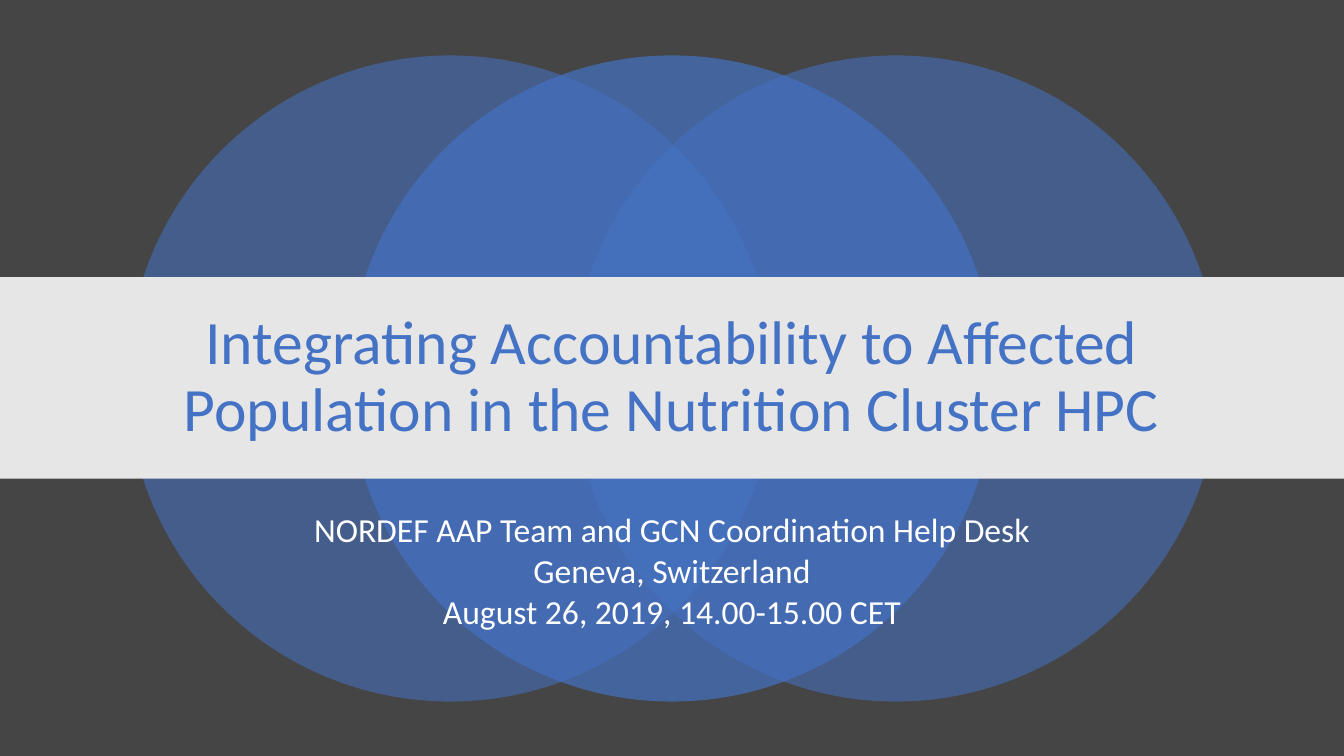
from lxml import etree
from pptx import Presentation
from pptx.dml.color import RGBColor
from pptx.enum.shapes import MSO_SHAPE
from pptx.enum.text import MSO_ANCHOR, MSO_AUTO_SIZE, PP_ALIGN
from pptx.oxml.ns import qn
from pptx.util import Inches, Pt

OVAL, RECT = MSO_SHAPE.OVAL, MSO_SHAPE.RECTANGLE
TOP, MIDDLE = MSO_ANCHOR.TOP, MSO_ANCHOR.MIDDLE
CENTER = PP_ALIGN.CENTER
NO_FIT = MSO_AUTO_SIZE.NONE
TITLE_ONLY = 5
COLORS = {"dark": "454545", "blue": "4472C4", "band": "E7E6E6", "white": "FFFFFF"}


def rgb(name):
    return RGBColor.from_string(COLORS[name])


def write(tf, lines, *, font, size, color, spacing, before=0, anchor=TOP):
    tf.word_wrap = True
    tf.auto_size = NO_FIT
    tf.vertical_anchor = anchor
    for i, line in enumerate(lines):
        p = tf.paragraphs[0] if i == 0 else tf.add_paragraph()
        p.alignment = CENTER
        p.line_spacing = spacing
        p.space_before = Pt(before)
        r = p.add_run()
        r.text = line
        r.font.name = font
        r.font.size = Pt(size)
        r.font.color.rgb = rgb(color)


class Deck:
    """Holds the deck style and the current slide."""

    def __init__(self, font):
        self.font = font
        self.prs = Presentation()
        self.prs.slide_width = Inches(13.33)
        self.prs.slide_height = Inches(7.5)

    def add_slide(self, background):
        self.s = self.prs.slides.add_slide(self.prs.slide_layouts[TITLE_ONLY])
        fill = self.s.background.fill
        fill.solid()
        fill.fore_color.rgb = rgb(background)

    def shape(self, kind, x, y, w, h, color, opacity=100):
        sp = self.s.shapes.add_shape(kind, Inches(x), Inches(y), Inches(w), Inches(h))
        sp.shadow.inherit = False
        sp.line.fill.background()
        sp.fill.solid()
        sp.fill.fore_color.rgb = rgb(color)
        if opacity < 100:
            clr = sp.element.spPr.find(".//" + qn("a:srgbClr"))
            etree.SubElement(clr, qn("a:alpha"), val=str(opacity * 1000))

    def text(self, x, y, w, h, lines, **style):
        sp = self.s.shapes.add_textbox(Inches(x), Inches(y), Inches(w), Inches(h))
        write(sp.text_frame, lines, font=self.font, **style)

    def title(self, x, y, w, h, text, **style):
        sp = self.s.shapes.title
        sp.left, sp.top, sp.width, sp.height = map(Inches, (x, y, w, h))
        write(sp.text_frame, [text], font=self.font, **style)
        sp.element.getparent().append(sp.element)


def main():
    deck = Deck("Calibri")
    deck.add_slide("dark")
    for x, opacity in ((1.26, 55), (5.68, 55), (3.46, 70)):
        deck.shape(OVAL, x, 0.55, 6.41, 6.41, "blue", opacity)
    deck.text(1.26, 5.08, 10.81, 1.33,
              ["NORDEF AAP Team and GCN Coordination Help Desk",
               "Geneva, Switzerland",
               "August 26, 2019, 14.00-15.00 CET"],
              size=24, color="white", spacing=0.8, before=6)
    deck.shape(RECT, 0, 2.75, 13.33, 2, "band")
    deck.title(1.21, 2.75, 10.91, 2,
               "Integrating Accountability to Affected Population in the Nutrition Cluster HPC",
               size=44, color="blue", spacing=0.9, anchor=MIDDLE)
    deck.prs.save("out.pptx")


if __name__ == "__main__":
    main()
